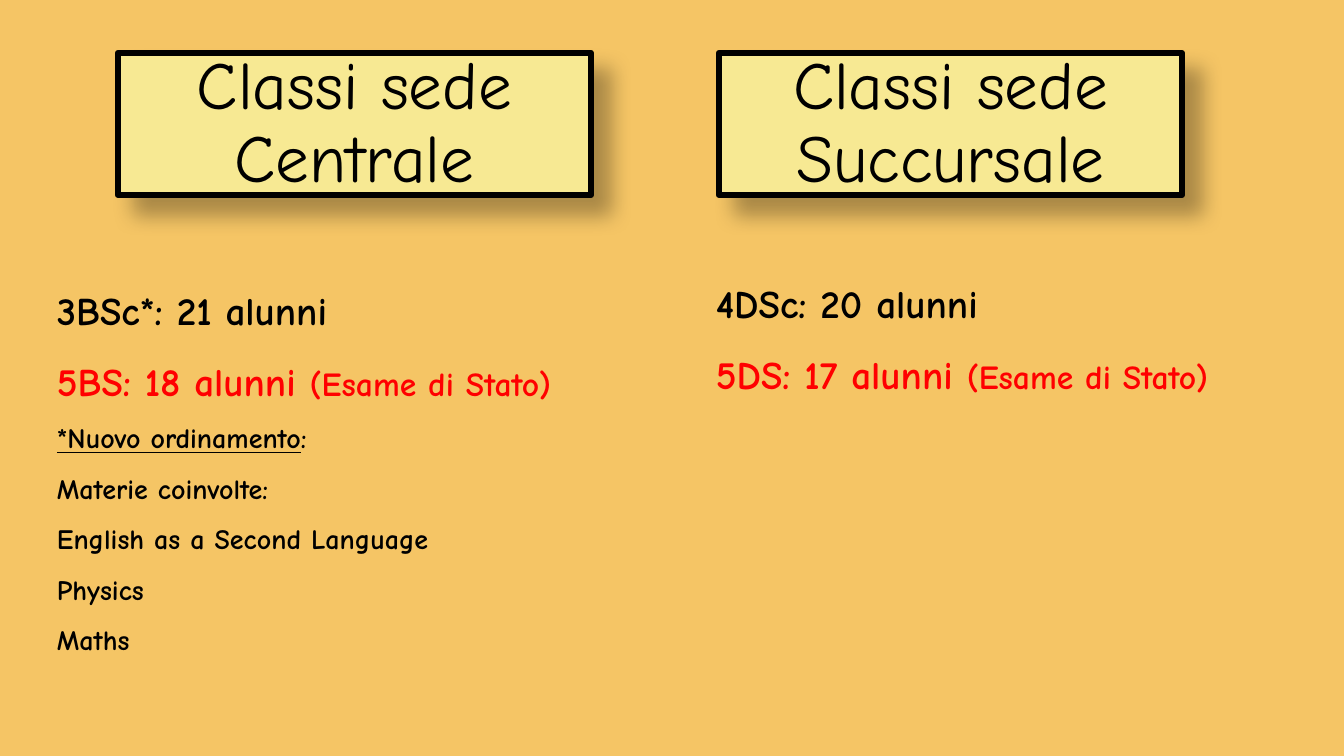
from lxml import etree
from pptx import Presentation
from pptx.dml.color import RGBColor
from pptx.enum.shapes import MSO_SHAPE
from pptx.enum.text import MSO_ANCHOR, MSO_AUTO_SIZE, PP_ALIGN
from pptx.oxml import parse_xml
from pptx.oxml.ns import nsdecls, qn
from pptx.util import Pt

RECTANGLE = MSO_SHAPE.RECTANGLE
MIDDLE, TOP = MSO_ANCHOR.MIDDLE, MSO_ANCHOR.TOP
CENTER = PP_ALIGN.CENTER
NO_AUTOFIT = MSO_AUTO_SIZE.NONE

SLIDE_WIDTH, SLIDE_HEIGHT = 1344, 756
EMU_PER_PX = 12192000 / SLIDE_WIDTH
FONT = "Comic Neue"
TITLE_ONLY = 5

ORANGE = RGBColor(0xF5, 0xC5, 0x65)
YELLOW = RGBColor(0xF7, 0xE9, 0x93)
BLACK = RGBColor(0x00, 0x00, 0x00)
RED = RGBColor(0xFF, 0x00, 0x00)


def px(length):
    return round(length * EMU_PER_PX)


def place(shape, box):
    shape.left, shape.top, shape.width, shape.height = map(px, box)


def style_run(run, size, color, bold=False, underline=False):
    font = run.font
    font.name = FONT
    font.size = Pt(size)
    font.color.rgb = color
    font.bold = bold
    font.underline = underline


def add_soft_shadow(shape):
    shape.shadow.inherit = False
    effects = shape.element.spPr.find(qn("a:effectLst"))
    shadow = parse_xml(
        f'<a:outerShdw {nsdecls("a")} blurRad="{Pt(15)}" dist="{Pt(18)}" '
        'dir="2700000" algn="tl" rotWithShape="0"/>')
    color = etree.SubElement(shadow, qn("a:srgbClr"), val=str(BLACK))
    etree.SubElement(color, qn("a:alpha"), val="30000")
    effects.append(shadow)


def format_heading(shape, box, text):
    place(shape, box)
    shape.fill.solid()
    shape.fill.fore_color.rgb = YELLOW
    shape.line.color.rgb = BLACK
    shape.line.width = Pt(4.5)
    add_soft_shadow(shape)
    frame = shape.text_frame
    frame.text = text
    frame.word_wrap = True
    frame.auto_size = NO_AUTOFIT
    frame.vertical_anchor = MIDDLE
    for paragraph in frame.paragraphs:
        paragraph.alignment = CENTER
        paragraph.line_spacing = 0.9
        for run in paragraph.runs:
            style_run(run, 48, BLACK)


def add_class_list(slide, box, lines):
    """Each line is a list of runs: text, size, colour, underlined."""
    frame = slide.shapes.add_textbox(*map(px, box)).text_frame
    frame.word_wrap = True
    frame.vertical_anchor = TOP
    for index, line in enumerate(lines):
        paragraph = frame.add_paragraph() if index else frame.paragraphs[0]
        paragraph.line_spacing = 1.5
        for text, size, color, underline in line:
            run = paragraph.add_run()
            run.text = text
            style_run(run, size, color, True, underline)


def class_line(text):
    return [(text, 28, BLACK, False)]


def exam_line(text):
    return [(text + " ", 28, RED, False), ("(Esame di Stato)", 24, RED, False)]


def note_line(text):
    return [(text, 20, BLACK, False)]


def main():
    presentation = Presentation()
    presentation.slide_width = px(SLIDE_WIDTH)
    presentation.slide_height = px(SLIDE_HEIGHT)
    slide = presentation.slides.add_slide(presentation.slide_layouts[TITLE_ONLY])
    slide.background.fill.solid()
    slide.background.fill.fore_color.rgb = ORANGE

    # Headings of the two sites
    format_heading(slide.shapes.title, (719, 53, 463, 142), "Classi sede Succursale")
    central_box = (118, 53, 473, 142)
    central_heading = slide.shapes.add_shape(RECTANGLE, *map(px, central_box))
    format_heading(central_heading, central_box, "Classi sede\nCentrale")

    # Classes of the branch site
    add_class_list(slide, (706, 251, 636, 224), [
        class_line("4DSc: 20 alunni"),
        exam_line("5DS: 17 alunni"),
    ])

    # Classes of the central site, with the subjects of the new curriculum
    subjects = ["English as a Second Language", "Physics", "Maths"]
    add_class_list(slide, (47, 258, 658, 407), [
        class_line("3BSc*: 21 alunni"),
        exam_line("5BS: 18 alunni"),
        [("*Nuovo ordinamento", 20, BLACK, True), (":", 20, BLACK, False)],
        note_line("Materie coinvolte:"),
        *map(note_line, subjects),
    ])

    presentation.save("out.pptx")


if __name__ == "__main__":
    main()
